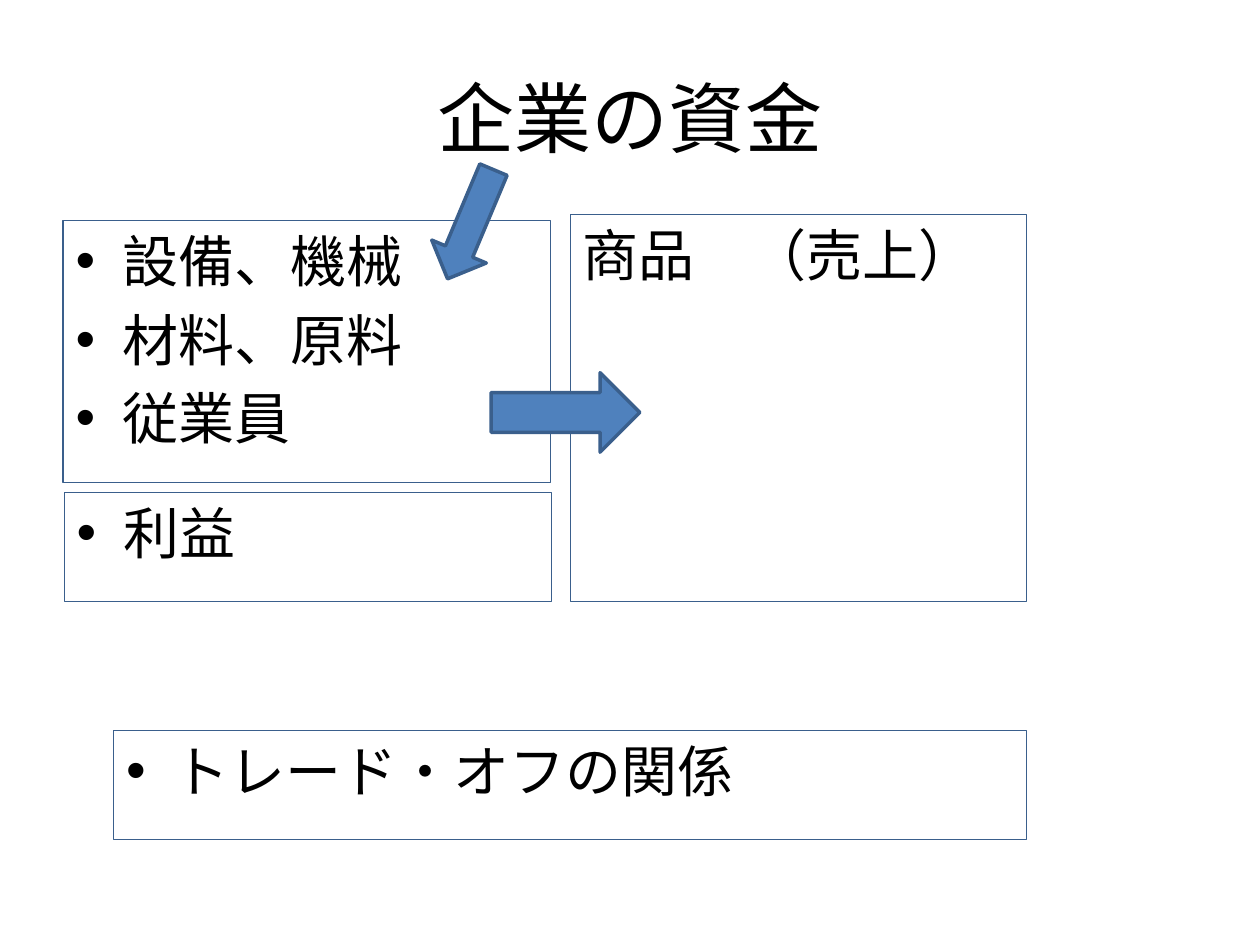
import pptx
import pptx.util
import pptx.dml.color
import pptx.enum.shapes
import pptx.enum.text
from lxml import etree
from pptx.oxml.ns import qn

Pt = pptx.util.Pt
Shape = pptx.enum.shapes.MSO_SHAPE
Anchor = pptx.enum.text.MSO_ANCHOR
Align = pptx.enum.text.PP_ALIGN

BLACK = pptx.dml.color.RGBColor(0x00, 0x00, 0x00)
BLUE = pptx.dml.color.RGBColor(0x4F, 0x81, 0xBD)
DARK_BLUE = pptx.dml.color.RGBColor(0x3A, 0x5F, 0x8C)

FONT = "Calibri"
TITLE_SIZE = 44
BODY_SIZE = 32
INDENT = 27


def place(shape, left, top, width, height):
    shape.left, shape.top = Pt(left), Pt(top)
    shape.width, shape.height = Pt(width), Pt(height)


def add_text(para, text, size):
    span = para.add_run()
    span.text = text
    span.font.name = FONT
    span.font.size = Pt(size)
    span.font.color.rgb = BLACK


def add_bullet(para):
    properties = para._p.get_or_add_pPr()
    properties.set("marL", str(Pt(INDENT)))
    properties.set("indent", str(-Pt(INDENT)))
    etree.SubElement(properties, qn("a:buFont"), typeface="Arial")
    etree.SubElement(properties, qn("a:buChar"), char="•")


def fill_box(box, lines, bulleted=True):
    """Outline a box and write its lines from the top left."""
    box.fill.background()
    box.line.color.rgb = DARK_BLUE
    box.line.width = Pt(0.75)
    frame = box.text_frame
    frame.word_wrap = True
    frame.auto_size = pptx.enum.text.MSO_AUTO_SIZE.NONE
    frame.vertical_anchor = Anchor.TOP
    for number, line in enumerate(lines):
        para = frame.add_paragraph() if number else frame.paragraphs[0]
        para.alignment = Align.LEFT
        para.space_before = Pt(BODY_SIZE * 0.2)
        if bulleted:
            add_bullet(para)
        add_text(para, line, BODY_SIZE)


def add_box(page, bounds, lines, bulleted=True):
    box = page.shapes.add_shape(Shape.RECTANGLE, *map(Pt, bounds))
    box.shadow.inherit = False
    fill_box(box, lines, bulleted)


def add_arrow(page, kind, bounds, rotation=0):
    arrow = page.shapes.add_shape(kind, *map(Pt, bounds))
    arrow.shadow.inherit = False
    arrow.rotation = rotation
    arrow.fill.solid()
    arrow.fill.fore_color.rgb = BLUE
    arrow.line.color.rgb = DARK_BLUE
    arrow.line.width = Pt(2)


def main():
    deck = pptx.Presentation()
    deck.slide_width, deck.slide_height = Pt(720), Pt(540)
    page = deck.slides.add_slide(deck.slide_layouts[1])

    # Title
    title = page.shapes.title
    place(title, 36, 21.6, 648, 90)
    title.text_frame.vertical_anchor = Anchor.MIDDLE
    para = title.text_frame.paragraphs[0]
    para.alignment = Align.CENTER
    add_text(para, "企業の資金", TITLE_SIZE)

    # Uses of funds, sales and profit
    body = page.placeholders[1]
    place(body, 36, 126, 278.6, 149.8)
    fill_box(body, ["設備、機械", "材料、原料", "従業員"])
    add_box(page, (326, 122.4, 260.8, 221.2), ["商品　（売上）"], bulleted=False)
    add_box(page, (36.7, 281.3, 278.6, 62.4), ["利益"])

    # Flow of funds
    add_arrow(page, Shape.RIGHT_ARROW, (280.6, 213, 85, 45.4))
    add_arrow(page, Shape.DOWN_ARROW, (252, 94.3, 33.8, 67.7), 22.8)

    # Conclusion
    add_box(page, (65, 417.4, 521.6, 62.4), ["トレード・オフの関係"])

    deck.save("out.pptx")


if __name__ == "__main__":
    main()
